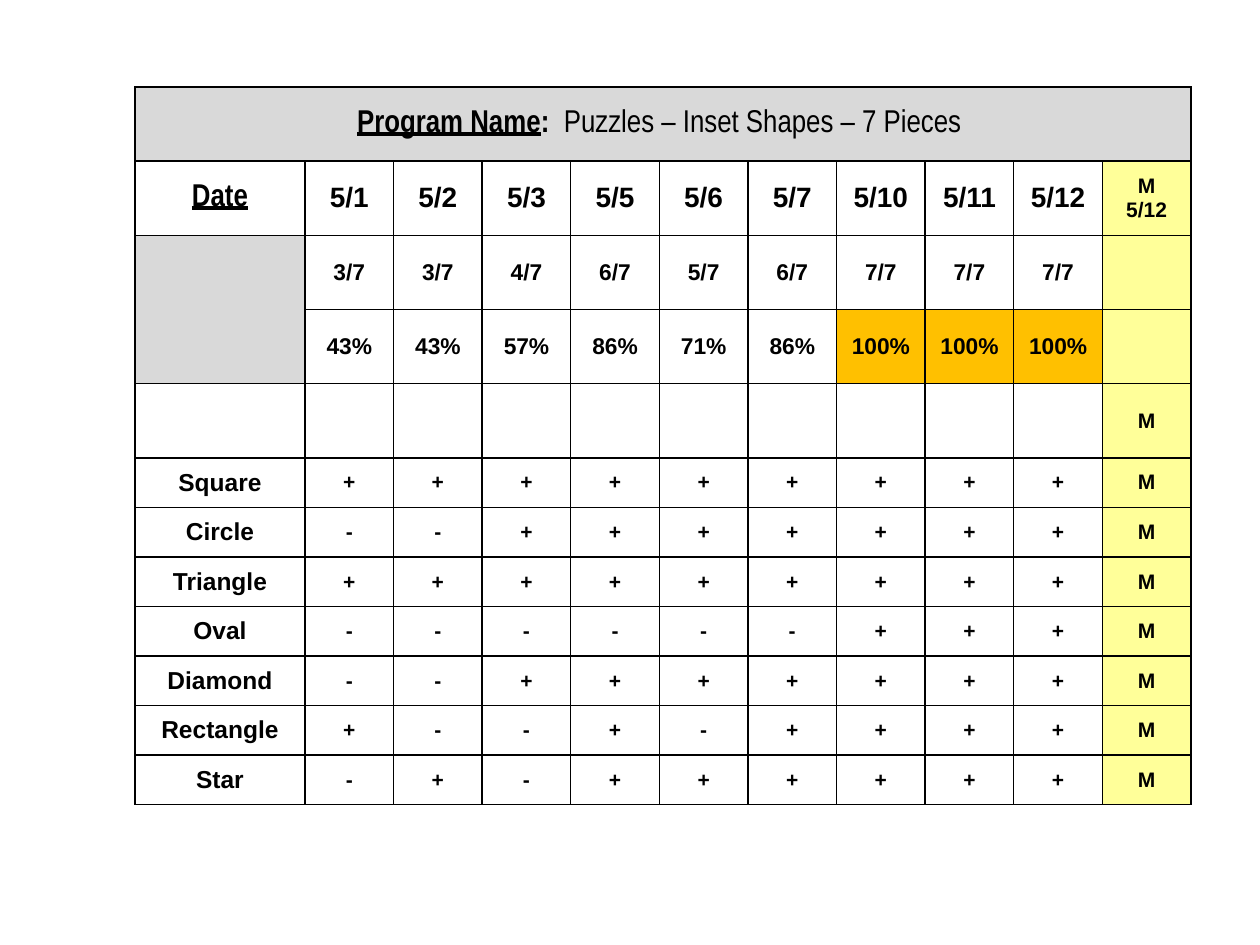
from lxml import etree
from pptx import Presentation
from pptx.dml.color import RGBColor
from pptx.enum.text import MSO_ANCHOR, PP_ALIGN
from pptx.oxml.ns import qn
from pptx.util import Pt

PX = 914400 // 126
CENTER, MIDDLE = PP_ALIGN.CENTER, MSO_ANCHOR.MIDDLE

BLACK = RGBColor(0x00, 0x00, 0x00)
WHITE = RGBColor(0xFF, 0xFF, 0xFF)
GRAY = RGBColor(0xD9, 0xD9, 0xD9)
YELLOW = RGBColor(0xFF, 0xFF, 0x99)
ORANGE = RGBColor(0xFF, 0xC0, 0x00)

BASE = {"name": "Arial", "bold": True}
HEADING = {"name": "Arial Narrow", "size": Pt(18)}
DATE = {"size": Pt(16)}
SCORE = {"size": Pt(13)}
SHAPE = {"size": Pt(14)}
MARK = {"size": Pt(12)}

TITLE = [
    ("Program Name", {"underline": True}),
    (":  ", {}),
    ("Puzzles – Inset Shapes – 7 Pieces ", {"bold": False}),
]
DATES = ["5/1", "5/2", "5/3", "5/5", "5/6", "5/7", "5/10", "5/11", "5/12"]
CORRECT = [3, 3, 4, 6, 5, 6, 7, 7, 7]
PIECES = 7
RESULTS = {
    "Square": "+++++++++",
    "Circle": "--+++++++",
    "Triangle": "+++++++++",
    "Oval": "------+++",
    "Diamond": "--+++++++",
    "Rectangle": "+--+-++++",
    "Star": "-+-++++++",
}
TALL_ROWS = 5
MASTERED = len(DATES) + 1


class DataSheet:
    def __init__(self, prs):
        self.slide = prs.slides.add_slide(prs.slide_layouts[6])

    def table(self, x, y, col_widths, row_heights):
        """Add a plain white table with thin black borders."""
        frame = self.slide.shapes.add_table(
            len(row_heights), len(col_widths), x * PX, y * PX,
            int(sum(col_widths) * PX), int(sum(row_heights) * PX))
        table = frame.table
        table.first_row = table.horz_banding = False
        for col, width in zip(table.columns, col_widths):
            col.width = int(width * PX)
        for row, height in zip(table.rows, row_heights):
            row.height = int(height * PX)
        for cell in table.iter_cells():
            self.border(cell)
            self.fill(cell, WHITE)
            cell.vertical_anchor = MIDDLE
        return table

    def border(self, cell):
        tcPr = cell._tc.get_or_add_tcPr()
        for side in ("a:lnL", "a:lnR", "a:lnT", "a:lnB"):
            ln = etree.SubElement(tcPr, qn(side), w=str(Pt(1)))
            solid = etree.SubElement(ln, qn("a:solidFill"))
            etree.SubElement(solid, qn("a:srgbClr"), val=str(BLACK))

    def fill(self, cell, color):
        cell.fill.solid()
        cell.fill.fore_color.rgb = color

    def text(self, cell, style, *lines):
        """Write each line, a string or a list of (text, format) runs, as a paragraph."""
        tf = cell.text_frame
        for i, line in enumerate(lines):
            p = tf.add_paragraph() if i else tf.paragraphs[0]
            p.alignment = CENTER
            runs = [(line, {})] if isinstance(line, str) else line
            for text, extra in runs:
                r = p.add_run()
                r.text = text
                for key, value in {**BASE, **style, **extra}.items():
                    setattr(r.font, key, value)
                r.font.color.rgb = BLACK


def main():
    prs = Presentation()
    prs.slide_width, prs.slide_height = 1260 * PX, 945 * PX
    s = DataSheet(prs)
    col_widths = [170] + [886 / MASTERED] * MASTERED
    row_heights = [371 / TALL_ROWS] * TALL_ROWS + [347 / len(RESULTS)] * len(RESULTS)
    table = s.table(135, 87, col_widths, row_heights)

    title = table.cell(0, 0)
    title.merge(table.cell(0, MASTERED))
    s.fill(title, GRAY)
    s.text(title, HEADING, TITLE)

    s.text(table.cell(1, 0), HEADING, [("Date", {"underline": True})])
    corner = table.cell(2, 0)
    corner.merge(table.cell(3, 0))
    s.fill(corner, GRAY)

    for col, (date, correct) in enumerate(zip(DATES, CORRECT), 1):
        s.text(table.cell(1, col), DATE, date)
        s.text(table.cell(2, col), SCORE, f"{correct}/{PIECES}")
        percent = table.cell(3, col)
        s.text(percent, SCORE, f"{correct / PIECES:.0%}")
        if correct == PIECES:
            s.fill(percent, ORANGE)

    for row, (shape, marks) in enumerate(RESULTS.items(), TALL_ROWS):
        s.text(table.cell(row, 0), SHAPE, shape)
        for col, mark in enumerate(marks, 1):
            s.text(table.cell(row, col), MARK, mark)

    s.text(table.cell(1, MASTERED), MARK, "M", DATES[-1])
    for row in range(1, len(row_heights)):
        cell = table.cell(row, MASTERED)
        s.fill(cell, YELLOW)
        if row >= TALL_ROWS - 1:
            s.text(cell, MARK, "M")

    prs.save("out.pptx")


if __name__ == "__main__":
    main()
